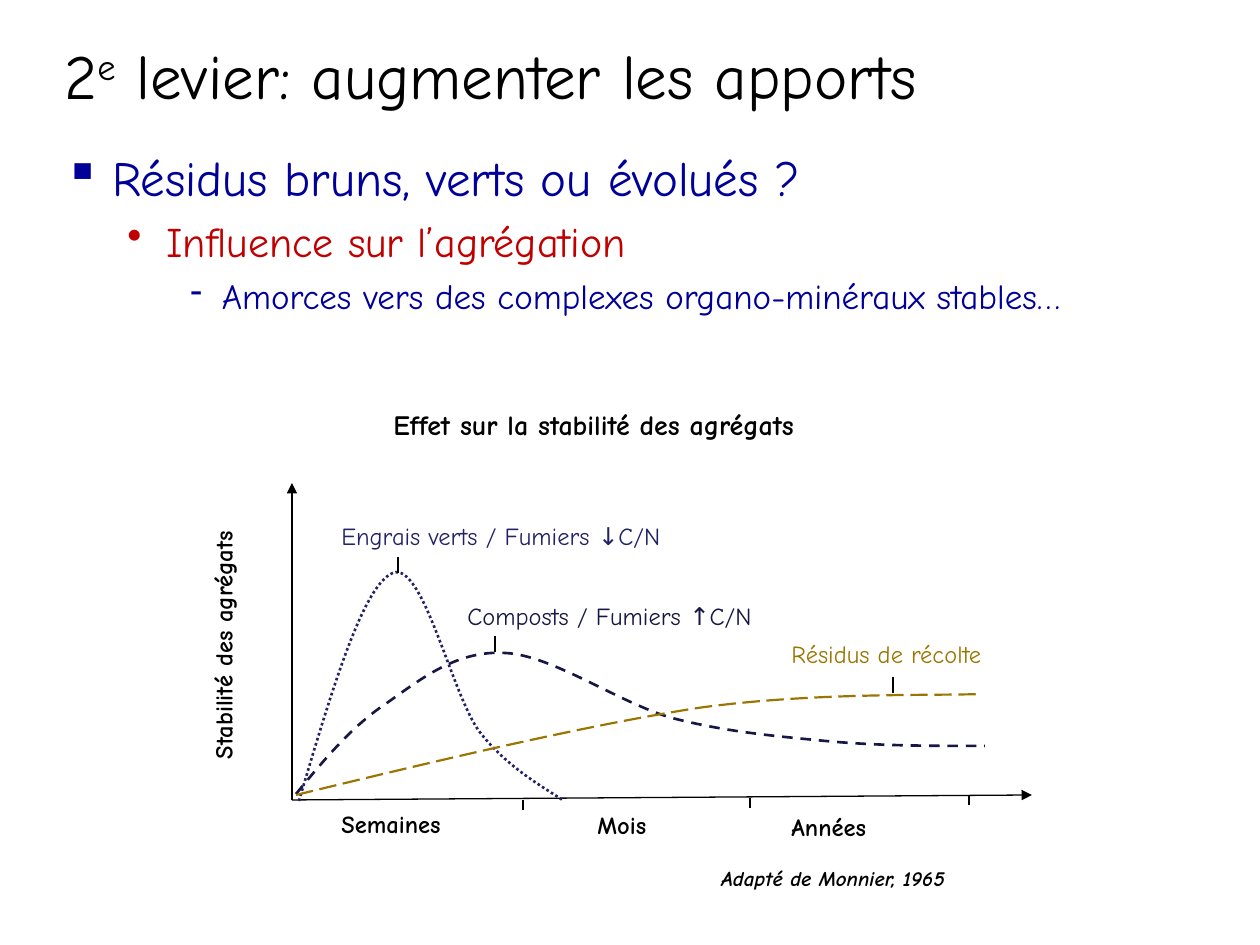
from dataclasses import dataclass

import lxml.etree
import pptx
import pptx.dml.color
import pptx.enum.dml
import pptx.enum.shapes
import pptx.enum.text
import pptx.oxml.ns
import pptx.util

EMU_PER_PX = 914400 / 126
FONT = "Comic Neue"
BLACK, BLUE, RED = "000000", "000099", "C00000"
VIOLET, NAVY, OCHRE = "222267", "171745", "9A7500"
DASH = pptx.enum.dml.MSO_LINE
Point = tuple[int, int]


@dataclass
class Label:
    text: str
    box: tuple[int, int, int, int]
    size: int = 14
    color: str = BLACK
    bold: bool = False
    italic: bool = False


@dataclass
class Bullet:
    text: str
    mark: str
    size: int
    color: str
    margin: float
    hanging: float
    space_before: float


@dataclass
class Curve:
    start: Point
    segments: list[tuple[Point, Point, Point]]
    color: str
    width: float
    dash: pptx.enum.dml.MSO_LINE


LABELS = [
    Label("Semaines", (329, 803, 169, 53), bold=True),
    Label("Mois", (585, 804, 169, 53), bold=True),
    Label("Années", (779, 806, 169, 53), bold=True),
    Label("Engrais verts / Fumiers ↓C/N", (329, 515, 375, 43), color=VIOLET),
    Label("Composts / Fumiers ↑C/N", (455, 595, 325, 43), color=NAVY),
    Label("Résidus de récolte", (779, 633, 282, 53), color=OCHRE),
    Label("Effet sur la stabilité des agrégats", (381, 401, 626, 58), 16, bold=True),
    Label("Adapté de Monnier, 1965", (709, 859, 341, 48), 12, bold=True, italic=True),
]
AXIS_LABEL = Label("Stabilité des agrégats", (202, 465, 64, 360), bold=True)
BULLETS = [
    Bullet("Résidus bruns, verts ou évolués ?", "▪", 28, BLUE, 0.38, 0.38, 0),
    Bullet("Influence sur l’agrégation", "•", 24, RED, 0.81, 0.31, 5.5),
    Bullet("Amorces vers des complexes organo-minéraux stables…", "-", 20, BLUE, 1.25, 0.25, 4.6),
]
CURVES = [
    Curve((299, 801), [
        ((331, 693), (363, 585), (393, 573)),
        ((423, 561), (451, 692), (479, 731)),
        ((508, 769), (547, 789), (564, 801)),
    ], VIOLET, 1.5, DASH.ROUND_DOT),
    Curve((296, 794), [
        ((324, 760), (352, 726), (387, 703)),
        ((421, 679), (457, 650), (505, 653)),
        ((552, 655), (619, 703), (672, 718)),
        ((726, 732), (774, 736), (825, 741)),
        ((878, 746), (931, 746), (985, 746)),
    ], NAVY, 1.5, DASH.DASH),
    Curve((296, 795), [
        ((440, 760), (583, 726), (698, 708)),
        ((813, 692), (935, 696), (982, 694)),
    ], OCHRE, 1.25, DASH.LONG_DASH),
]
ORIGIN = (292, 800)
AXIS_ENDS = [(292, 483), (1032, 795)]
TICK_TOPS = [(523, 800), (750, 798), (969, 795)]
POINTER_TOPS = [(398, 557), (495, 636), (893, 677)]
TICK_LENGTH, POINTER_LENGTH = 10, 16


def px(value: int) -> int:
    return round(value * EMU_PER_PX)


def rgb(color: str) -> pptx.dml.color.RGBColor:
    return pptx.dml.color.RGBColor.from_string(color)


def add_child(parent, tag: str, **attributes: str):
    child = lxml.etree.SubElement(parent, pptx.oxml.ns.qn(tag))
    for name, value in attributes.items():
        child.set(name, value)
    return child


def add_box(slide, box: tuple[int, int, int, int]):
    shape = slide.shapes.add_textbox(*map(px, box))
    shape.text_frame.word_wrap = True
    return shape


def add_run(paragraph, text: str, size: int, color: str, bold: bool = False, italic: bool = False):
    run = paragraph.add_run()
    run.text = text
    run.font.name = FONT
    run.font.size = pptx.util.Pt(size)
    run.font.color.rgb = rgb(color)
    run.font.bold = bold
    run.font.italic = italic
    return run


def add_label(slide, label: Label):
    shape = add_box(slide, label.box)
    shape.text_frame.auto_size = pptx.enum.text.MSO_AUTO_SIZE.SHAPE_TO_FIT_TEXT
    add_run(shape.text_frame.paragraphs[0], label.text, label.size, label.color, label.bold, label.italic)
    return shape


def add_axis_label(slide, label: Label) -> None:
    frame = add_label(slide, label).text_frame
    frame._txBody.bodyPr.set("vert", "vert270")
    frame.paragraphs[0].alignment = pptx.enum.text.PP_ALIGN.CENTER


def add_title(slide) -> None:
    frame = add_box(slide, (52, 25, 1134, 98)).text_frame
    frame.vertical_anchor = pptx.enum.text.MSO_ANCHOR.MIDDLE
    paragraph = frame.paragraphs[0]
    add_run(paragraph, "2", 36, BLACK)
    superscript = add_run(paragraph, "e", 36, BLACK)
    superscript._r.get_or_add_rPr().set("baseline", "30000")
    add_run(paragraph, " levier: augmenter les apports", 36, BLACK)


def add_bullets(slide, bullets: list[Bullet]) -> None:
    frame = add_box(slide, (52, 141, 1134, 64)).text_frame
    for level, bullet in enumerate(bullets):
        paragraph = frame.add_paragraph() if level else frame.paragraphs[0]
        paragraph.level = level
        properties = paragraph._p.get_or_add_pPr()
        properties.set("marL", str(pptx.util.Inches(bullet.margin)))
        properties.set("indent", str(-pptx.util.Inches(bullet.hanging)))
        add_child(properties, "a:buChar", char=bullet.mark)
        paragraph.space_before = pptx.util.Pt(bullet.space_before)
        add_run(paragraph, bullet.text, bullet.size, bullet.color)


def add_line(slide, start: Point, end: Point, arrow: bool = False) -> None:
    connector = slide.shapes.add_connector(
        pptx.enum.shapes.MSO_CONNECTOR.STRAIGHT, *map(px, start + end))
    connector.line.color.rgb = rgb(BLACK)
    connector.line.width = pptx.util.Pt(0.75)
    if arrow:
        add_child(connector.line._get_or_add_ln(), "a:tailEnd", type="triangle")
    add_child(connector._element.spPr, "a:effectLst")


def add_curve(slide, curve: Curve) -> None:
    builder = slide.shapes.build_freeform(*map(px, curve.start))
    builder.add_line_segments([tuple(map(px, end)) for _, _, end in curve.segments], close=False)
    shape = builder.convert_to_shape()
    outline = shape._element.find(".//" + pptx.oxml.ns.qn("a:path"))
    for straight in outline.findall(pptx.oxml.ns.qn("a:lnTo")):
        outline.remove(straight)
    for segment in curve.segments:
        bezier = add_child(outline, "a:cubicBezTo")
        for x, y in segment:
            add_child(bezier, "a:pt", x=str(px(x) - shape.left), y=str(px(y) - shape.top))
    shape.shadow.inherit = False
    shape.fill.background()
    shape.line.color.rgb = rgb(curve.color)
    shape.line.width = pptx.util.Pt(curve.width)
    shape.line.dash_style = curve.dash


def main() -> None:
    presentation = pptx.Presentation()
    presentation.slide_width = px(1260)
    presentation.slide_height = px(945)
    slide = presentation.slides.add_slide(presentation.slide_layouts[6])
    add_title(slide)
    add_bullets(slide, BULLETS)
    add_axis_label(slide, AXIS_LABEL)
    for label in LABELS:
        add_label(slide, label)
    for end in AXIS_ENDS:
        add_line(slide, ORIGIN, end, arrow=True)
    for curve in CURVES:
        add_curve(slide, curve)
    for tops, length in ((TICK_TOPS, TICK_LENGTH), (POINTER_TOPS, POINTER_LENGTH)):
        for x, y in tops:
            add_line(slide, (x, y), (x, y + length))
    presentation.save("out.pptx")


if __name__ == "__main__":
    main()
